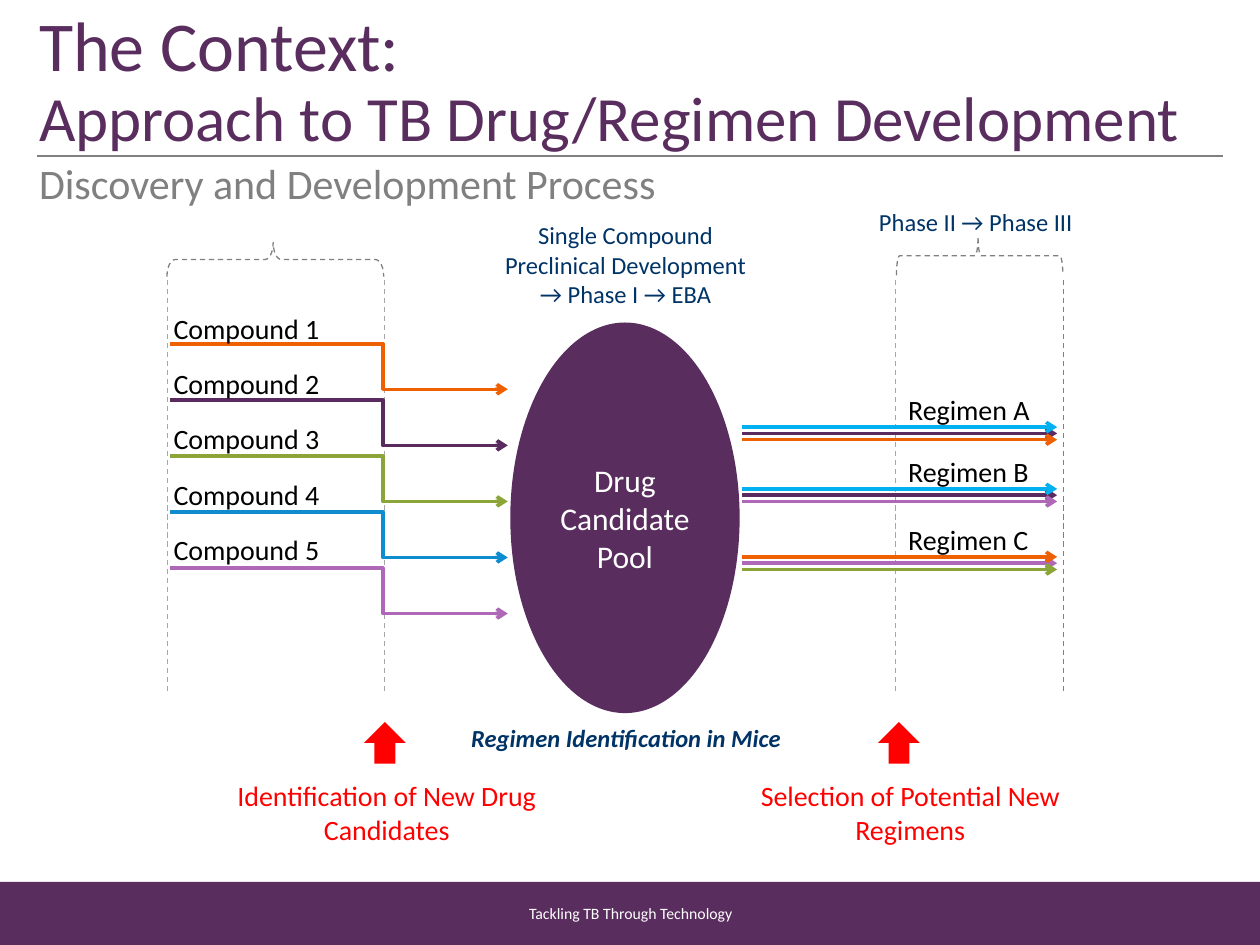
"""Build the slide on how TB drugs and regimens are developed."""
from dataclasses import dataclass

from lxml.etree import SubElement
from pptx import Presentation
from pptx.dml.color import RGBColor
from pptx.enum.dml import MSO_LINE
from pptx.enum.shapes import MSO_CONNECTOR, MSO_SHAPE
from pptx.enum.text import MSO_ANCHOR, PP_ALIGN
from pptx.oxml.ns import qn
from pptx.util import Inches, Pt

WIDTH, HEIGHT = Inches(10), Inches(7.5)
COLS, ROWS = 100, 75
FONT = "Calibri"
PLUM = RGBColor(0x5A, 0x2D, 0x5F)
DARK = RGBColor(0x59, 0x2B, 0x5E)
ORANGE = RGBColor(0xEE, 0x60, 0x00)
GREEN = RGBColor(0x8B, 0xA5, 0x39)
BLUE = RGBColor(0x0D, 0x8D, 0xCF)
SKY = RGBColor(0x00, 0xB0, 0xF0)
LILAC = RGBColor(0xAF, 0x68, 0xB7)
NAVY = RGBColor(0x00, 0x33, 0x66)
RED = RGBColor(0xFF, 0x00, 0x00)
GRAY = RGBColor(0x80, 0x80, 0x80)
PALE = RGBColor(0xA6, 0xA6, 0xA6)
BLACK = RGBColor(0x00, 0x00, 0x00)
WHITE = RGBColor(0xFF, 0xFF, 0xFF)


@dataclass(frozen=True)
class Box:
    """A place on the grid, in columns and rows."""
    left: float
    top: float
    wide: float
    high: float

    def place(self) -> tuple[int, int, int, int]:
        """Give the left, top, width and height as slide lengths."""
        return col(self.left), row(self.top), col(self.wide), row(self.high)


@dataclass(frozen=True)
class Regimen:
    """A regimen, its middle row, and its middle, lower and upper hues."""
    name: str
    mid: float
    hues: tuple[RGBColor, RGBColor, RGBColor]


@dataclass(frozen=True)
class Brace:
    """A brace, before its quarter turn, with its two bends."""
    box: Box
    curl: float
    point: float


@dataclass(frozen=True)
class Guide:
    """An upright dashed line at a column."""
    at: float
    hue: RGBColor


COMPOUNDS = (ORANGE, DARK, GREEN, BLUE, LILAC)
REGIMENS = (
    Regimen("Regimen A", 34.4, (DARK, ORANGE, SKY)),
    Regimen("Regimen B", 39.3, (DARK, LILAC, SKY)),
    Regimen("Regimen C", 44.7, (LILAC, GREEN, ORANGE)),
)
BRACES = (
    Brace(Box(20.5, 12, 2.7, 17.2), 0.24, 0.51),
    Brace(Box(76.2, 13.7, 3.1, 13.2), 0.08, 0.51),
)
GUIDES = (Guide(13.3, PALE), Guide(30.5, PALE), Guide(71.1, PALE), Guide(84.4, GRAY))


def col(count: float) -> int:
    """Turn columns into a slide length."""
    return round(WIDTH * count / COLS)


def row(count: float) -> int:
    """Turn rows into a slide length."""
    return round(HEIGHT * count / ROWS)


def write(frame, text: str, *, size: float, hue: RGBColor, drop: float = 0,
          align=PP_ALIGN.CENTER, anchor=MSO_ANCHOR.TOP, bold: bool = False,
          slant: bool = False, wrap: bool = True, inset: bool = True,
          pitch: float = 1) -> None:
    """Fill a frame; \\n starts a paragraph, \\v a line of size drop."""
    frame.word_wrap, frame.vertical_anchor = wrap, anchor
    if not inset:
        frame.margin_left = frame.margin_right = 0
        frame.margin_top = frame.margin_bottom = 0
    for count, part in enumerate(text.split("\n")):
        para = frame.add_paragraph() if count else frame.paragraphs[0]
        para.alignment, para.line_spacing = align, pitch
        for step, words in enumerate(part.split("\v")):
            if step:
                para.add_line_break()
            run = para.add_run()
            run.text = words
            font = run.font
            font.name, font.size = FONT, Pt(drop if step else size)
            font.bold, font.italic = bold, slant
            font.color.rgb = hue


def label(slide, box: Box, text: str, **style) -> None:
    """Add a text box."""
    write(slide.shapes.add_textbox(*box.place()).text_frame, text, **style)


def form(slide, kind, box: Box, *, fill: RGBColor | None = None, turn: float = 0):
    """Add a flat shape, filled or dashed in outline."""
    shape = slide.shapes.add_shape(kind, *box.place())
    shape.shadow.inherit = False
    shape.rotation = turn
    if fill is None:
        shape.fill.background()
        shape.line.color.rgb, shape.line.width = GRAY, Pt(0.75)
        shape.line.dash_style = MSO_LINE.DASH
    else:
        shape.fill.solid()
        shape.fill.fore_color.rgb = fill
        shape.line.fill.background()
    return shape


def line(slide, start: tuple[float, float], end: tuple[float, float], hue: RGBColor,
         *, width: float = 2, head: bool = False, dash: bool = False,
         bend: int = 0) -> None:
    """Add a line, bent at a percent of its width if asked."""
    kind = MSO_CONNECTOR.ELBOW if bend else MSO_CONNECTOR.STRAIGHT
    link = slide.shapes.add_connector(kind, col(start[0]), row(start[1]),
                                      col(end[0]), row(end[1]))
    link.line.color.rgb, link.line.width = hue, Pt(width)
    if dash:
        link.line.dash_style = MSO_LINE.DASH
    props = link.element.spPr
    if head:
        SubElement(props.find(qn("a:ln")), qn("a:tailEnd"), type="arrow")
    if bend:
        values = props.find(qn("a:prstGeom")).get_or_add_avLst()
        SubElement(values, qn("a:gd"), name="adj1", fmla=f"val {bend * 1000}")
    SubElement(props, qn("a:effectLst"))


def frame_page(slide) -> None:
    """Draw the title, the subtitle and the footer."""
    line(slide, (2.9, 12.4), (97.1, 12.4), GRAY, width=1)
    form(slide, MSO_SHAPE.RECTANGLE, Box(0, 70, COLS, 5), fill=PLUM)
    label(slide, Box(34.2, 71.7, 31.7, 1.5), "Tackling TB Through Technology",
          size=9, hue=WHITE, anchor=MSO_ANCHOR.MIDDLE, inset=False)
    label(slide, Box(3.1, 12.5, 94.2, 4.2), "Discovery and Development Process",
          size=24, hue=GRAY, align=PP_ALIGN.LEFT, inset=False)
    label(slide, Box(3.1, 4.8, 94.8, 7.5),
          "The Context:\vApproach to TB Drug/Regimen Development", size=40, drop=36,
          hue=PLUM, align=PP_ALIGN.LEFT, anchor=MSO_ANCHOR.BOTTOM, inset=False, pitch=0.9)


def draw_flow(slide) -> None:
    """Draw the compounds, the pool and the regimens."""
    pool = form(slide, MSO_SHAPE.OVAL, Box(40.5, 25.6, 18.2, 31), fill=PLUM)
    write(pool.text_frame, "Drug Candidate Pool", size=18, hue=WHITE,
          anchor=MSO_ANCHOR.MIDDLE)
    for guide in GUIDES:
        line(slide, (guide.at, 22.2), (guide.at, 54.9), guide.hue, width=0.75, dash=True)
    for brace in BRACES:
        shape = form(slide, MSO_SHAPE.LEFT_BRACE, brace.box, turn=90)
        shape.adjustments[0], shape.adjustments[1] = brace.curl, brace.point
    plain = dict(size=16, hue=BLACK, align=PP_ALIGN.LEFT, wrap=False)
    for step, hue in enumerate(COMPOUNDS):
        top = 27.3 + 4.45 * step
        line(slide, (13.5, top), (40.3, top + 3.6), hue, head=True, bend=63)
        label(slide, Box(12.8, 24.2 + 4.4 * step, 13.7, 3.7), f"Compound {step + 1}", **plain)
    for item in REGIMENS:
        for shift, hue in zip((0, 0.5, -0.5), item.hues):
            line(slide, (58.9, item.mid + shift), (83.9, item.mid + shift), hue, head=True)
        label(slide, Box(71.1, item.mid - 3.7, 11.7, 3.7), item.name, **plain)


def add_notes(slide) -> None:
    """Draw the stage names and the red gates."""
    stage = dict(size=14, hue=NAVY)
    label(slide, Box(62.5, 15.9, 29.9, 3.4), "Phase II → Phase III", **stage)
    label(slide, Box(37.6, 17, 24.1, 8.1),
          "Single Compound\nPreclinical Development\n→ Phase I → EBA", **stage)
    label(slide, Box(35.1, 56.9, 29.2, 5.7), "Regimen Identification in Mice",
          bold=True, slant=True, **stage)
    for left in (28.9, 69.7):
        form(slide, MSO_SHAPE.RIGHT_ARROW, Box(left, 57.3, 3.3, 3.3), fill=RED, turn=270)
    label(slide, Box(13.2, 61.3, 35, 6.4), "Identification of New Drug\nCandidates",
          size=16, hue=RED)
    label(slide, Box(55.6, 61.3, 33.3, 6.4), "Selection of Potential New Regimens",
          size=16, hue=RED)


def main() -> None:
    """Build and save the slide."""
    deck = Presentation()
    deck.slide_width, deck.slide_height = WIDTH, HEIGHT
    slide = deck.slides.add_slide(deck.slide_layouts[6])
    for draw in (frame_page, draw_flow, add_notes):
        draw(slide)
    deck.save("out.pptx")


if __name__ == "__main__":
    main()
